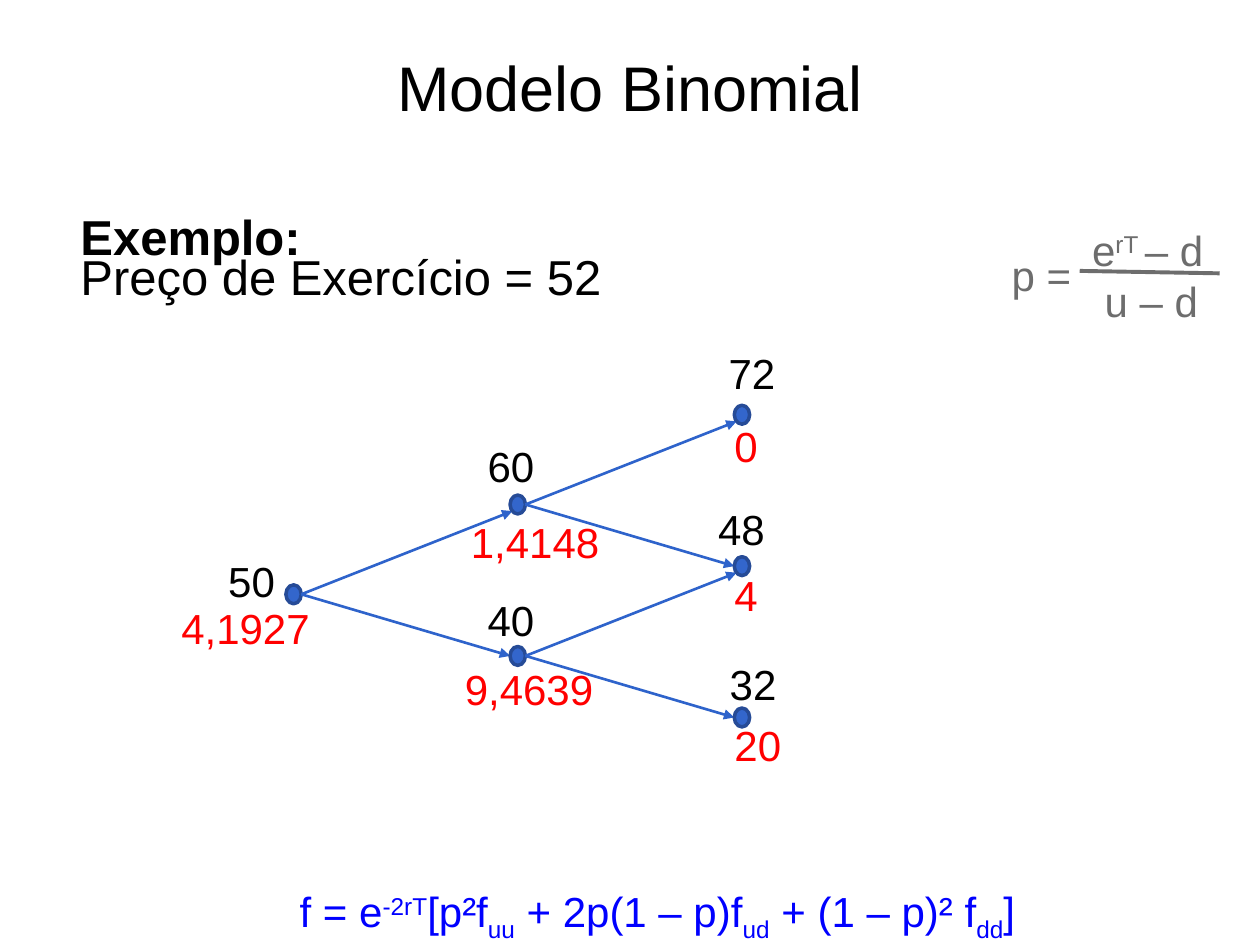
from pptx import Presentation
from pptx.util import Pt
from pptx.dml.color import RGBColor
from pptx.enum.shapes import MSO_CONNECTOR, MSO_SHAPE
from pptx.enum.text import MSO_ANCHOR, PP_ALIGN
from pptx.oxml.ns import qn
from lxml import etree

STRAIGHT = MSO_CONNECTOR.STRAIGHT
OVAL = MSO_SHAPE.OVAL
LEFT, CENTER = PP_ALIGN.LEFT, PP_ALIGN.CENTER
TOP, MIDDLE = MSO_ANCHOR.TOP, MSO_ANCHOR.MIDDLE

BLACK, RED, BLUE, GRAY = "000000", "FF0000", "0000FF", "6D6D6D"
NODE_FILL, NODE_LINE, BRANCH = "3366CC", "264B97", "2E63CB"
SUPER, SUB = 30, -25

HEADINGS = [
    ("Modelo Binomial", (36, 21.6, 648, 55.4),
     dict(size=36, align=CENTER, anchor=MIDDLE)),
    ("Exemplo:", (38.9, 101, 519, 60), dict(size=28, bold=True, spacing=1.4)),
    ("Preço de Exercício = 52", (36, 137.5, 317.5, 41),
     dict(size=28, align=CENTER)),
]
FORMULAS = [
    (["p ="], (571, 133.2, 56.2, 38.2), dict(color=GRAY, spacing=1.2)),
    (["e", ("rT ", SUPER), "– d"], (617, 118.8, 83.5, 38.9),
     dict(color=GRAY, spacing=1.2, wrap=False)),
    (["u – d"], (624.2, 148.3, 68.4, 38.9),
     dict(color=GRAY, spacing=1.2, wrap=False)),
    (["f = e", ("-2rT", SUPER), "[p²f", ("uu", SUB), " + 2p(1 – p)f",
      ("ud", SUB), " + (1 – p)² f", ("dd", SUB), "]"],
     (164.2, 496, 434.9, 40.3), dict(color=BLUE, spacing=1.2)),
]
FRACTION_BAR = (617, 154.8, 697, 156.2)

# (ups, downs): price, price position, option value, value position
TREE = {
    (0, 0): ("50", (123.3, 313.9), "4,1927", (96.5, 340.6)),
    (1, 0): ("60", (271.6, 248.4), "1,4148", (262, 291.6)),
    (0, 1): ("40", (271.6, 336.2), "9,4639", (258.5, 375.8)),
    (2, 0): ("72", (409.2, 195.1), "0", (412.6, 236.9)),
    (1, 1): ("48", (403.2, 284.4), "4", (412.6, 321.8)),
    (0, 2): ("32", (409.9, 373), "20", (412.6, 407.5)),
}
ROOT_X, ROOT_Y = 167.8, 339.6
STEP_X, UP, DOWN = 128.1, 51.3, 35.2
NODE_W, NODE_H = 8.8, 10.8
PRICE_W, VALUE_W, LABEL_H = 74, 93, 36


def rgb(value):
    return RGBColor.from_string(value)


def add_text(slide, parts, place, size=24, color=BLACK, bold=False,
             align=LEFT, anchor=TOP, spacing=None, wrap=True):
    frame = slide.shapes.add_textbox(*map(Pt, place)).text_frame
    frame.word_wrap = wrap
    frame.vertical_anchor = anchor
    paragraph = frame.paragraphs[0]
    paragraph.alignment = align
    paragraph.line_spacing = spacing
    formats = dict(name="Arial", size=Pt(size), bold=bold)
    for part in [parts] if isinstance(parts, str) else parts:
        words, baseline = (part, 0) if isinstance(part, str) else part
        run = paragraph.add_run()
        run.text = words
        for key, value in formats.items():
            setattr(run.font, key, value)
        run.font.color.rgb = rgb(color)
        if baseline:
            run._r.get_or_add_rPr().set("baseline", str(baseline * 1000))


def add_line(slide, ends, color, width, arrow=False):
    line = slide.shapes.add_connector(STRAIGHT, *map(Pt, ends))
    line.line.color.rgb = rgb(color)
    line.line.width = Pt(width)
    if arrow:
        etree.SubElement(line.line._get_or_add_ln(), qn("a:tailEnd"),
                         type="triangle")
    etree.SubElement(line._element.spPr, qn("a:effectLst"))


def center(ups, downs):
    return (ROOT_X + STEP_X * (ups + downs),
            ROOT_Y - UP * ups + DOWN * downs)


def add_node(slide, x, y):
    node = slide.shapes.add_shape(OVAL, Pt(x - NODE_W / 2), Pt(y - NODE_H / 2),
                                  Pt(NODE_W), Pt(NODE_H))
    node.shadow.inherit = False
    node.fill.solid()
    node.fill.fore_color.rgb = rgb(NODE_FILL)
    node.line.color.rgb = rgb(NODE_LINE)
    node.line.width = Pt(2)


def add_branches(slide, ups, downs):
    x, y = center(ups, downs)
    start = (x + NODE_W / 2, y)
    up_x, up_y = center(ups + 1, downs)
    down_x, down_y = center(ups, downs + 1)
    ends = [(up_x - 0.35 * NODE_W, up_y + 0.35 * NODE_H),
            (down_x - NODE_W / 2, down_y)]
    for end in ends:
        add_line(slide, start + end, BRANCH, 1.5, arrow=True)


def main():
    deck = Presentation()
    deck.slide_width, deck.slide_height = Pt(720), Pt(540)
    slide = deck.slides.add_slide(deck.slide_layouts[6])
    for parts, place, style in HEADINGS + FORMULAS:
        add_text(slide, parts, place, **style)
    add_line(slide, FRACTION_BAR, GRAY, 2.25)
    for ups, downs in TREE:
        add_node(slide, *center(ups, downs))
        if ups + downs < 2:
            add_branches(slide, ups, downs)
    for price, price_at, value, value_at in TREE.values():
        add_text(slide, price, (*price_at, PRICE_W, LABEL_H))
        add_text(slide, value, (*value_at, VALUE_W, LABEL_H), color=RED)
    deck.save("out.pptx")


if __name__ == "__main__":
    main()
